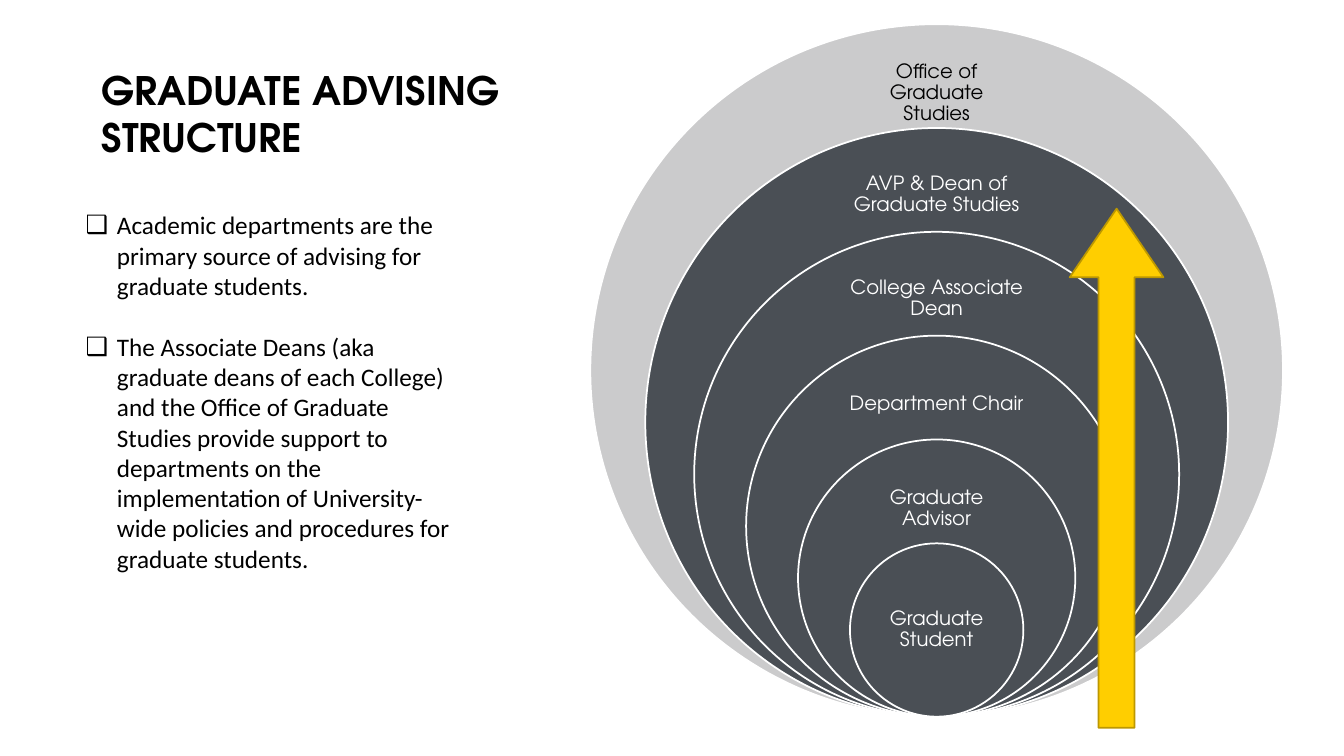
from lxml import etree
from pptx import Presentation
from pptx.dml.color import RGBColor
from pptx.enum.shapes import MSO_SHAPE
from pptx.enum.text import MSO_ANCHOR, MSO_AUTO_SIZE, PP_ALIGN
from pptx.oxml.ns import qn
from pptx.util import Inches, Pt

ELLIPSE = MSO_SHAPE.OVAL
ARROW = MSO_SHAPE.RIGHT_ARROW
TOP = MSO_ANCHOR.TOP
MIDDLE = MSO_ANCHOR.MIDDLE
NO_FIT = MSO_AUTO_SIZE.NONE
LEFT = PP_ALIGN.LEFT
CENTER = PP_ALIGN.CENTER

COLORS = {
    "black": "000000",
    "white": "FFFFFF",
    "gray": "8A8A8D",
    "slate": "4A4F55",
    "gold": "FFCE00",
    "dark gold": "BD9800",
}
HEADING_FONT = "TeX Gyre Adventor"
BODY_FONT = "Calibri"

TITLE = "GRADUATE ADVISING STRUCTURE"
POINTS = [
    "Academic departments are the primary source of advising for graduate students.",
    "The Associate Deans (aka graduate deans of each College) and the Office of "
    "Graduate Studies provide support to departments on the implementation of "
    "University-wide policies and procedures for graduate students.",
]

CIRCLE_CENTER = 9.29
CIRCLE_BOTTOM = 7.11
OUTER_DIAMETER = 6.87
DIAMETER_STEP = 1.03
LEVELS = [
    ("Office of Graduate Studies", 0.68, 1.82, 0.49),
    ("AVP & Dean of Graduate Studies", 1.6, 2.49, 0.67),
    ("College Associate Dean", 2.63, 2.49, 0.66),
    ("Department Chair", 3.67, 2.04, 0.68),
    ("Graduate Advisor", 4.7, 1.79, 0.69),
    ("Graduate Student", 5.82, 1.21, 0.86),
]


def rgb(name):
    return RGBColor.from_string(COLORS[name])


def write(para, text, size=18, font=BODY_FONT, color="black", bold=False,
          align=LEFT, spacing=1.0, before=0, after=0):
    para.alignment = align
    para.line_spacing = spacing
    para.space_before = Pt(before)
    para.space_after = Pt(after)
    span = para.add_run()
    span.text = text
    span.font.size = Pt(size)
    span.font.name = font
    span.font.bold = bold
    span.font.color.rgb = rgb(color)


class Page:
    def __init__(self, deck):
        self.slide = deck.slides.add_slide(deck.slide_layouts[1])
        self.shapes = self.slide.shapes
        self.line_width = Pt(1.25)

    def place(self, box, left, top, width, height, anchor=TOP):
        box.left, box.top = Inches(left), Inches(top)
        box.width, box.height = Inches(width), Inches(height)
        frame = box.text_frame
        frame.word_wrap = True
        frame.auto_size = NO_FIT
        frame.vertical_anchor = anchor
        return frame

    def title(self, text, *bounds):
        frame = self.place(self.shapes.title, *bounds)
        write(frame.paragraphs[0], text, size=28, font=HEADING_FONT, bold=True)

    def bullets(self, points, *bounds):
        frame = self.place(self.slide.placeholders[1], *bounds)
        for index, point in enumerate(points):
            para = frame.add_paragraph() if index else frame.paragraphs[0]
            write(para, point, before=22 if index else 0)
            properties = para._p.get_or_add_pPr()
            properties.set("marL", str(Inches(0.31)))
            properties.set("indent", str(-Inches(0.31)))
            etree.SubElement(properties, qn("a:buChar")).set("char", "❑")

    def shape(self, kind, left, top, width, height, fill, line, opacity=100):
        shape = self.shapes.add_shape(
            kind, Inches(left), Inches(top), Inches(width), Inches(height))
        shape.shadow.inherit = False
        shape.fill.solid()
        shape.fill.fore_color.rgb = rgb(fill)
        shape.line.color.rgb = rgb(line)
        shape.line.width = self.line_width
        if opacity < 100:
            color = shape._element.spPr.find(qn("a:solidFill"))[0]
            etree.SubElement(color, qn("a:alpha")).set("val", str(opacity * 1000))
        return shape

    def label(self, text, left, top, width, height, color):
        box = self.shapes.add_textbox(0, 0, 0, 0)
        frame = self.place(box, left, top, width, height, MIDDLE)
        frame.margin_left = frame.margin_right = Inches(0.11)
        frame.margin_top = frame.margin_bottom = Inches(0.11)
        write(frame.paragraphs[0], text, size=14, font=HEADING_FONT, color=color,
              align=CENTER, spacing=0.9, after=4.9)

    def level(self, index, text, top, width, height):
        outer = index == 0
        diameter = OUTER_DIAMETER - index * DIAMETER_STEP
        circle_width = 5.78 if index == 1 else diameter
        self.shape(ELLIPSE, CIRCLE_CENTER - circle_width / 2,
                   CIRCLE_BOTTOM - diameter, circle_width, diameter,
                   "gray" if outer else "slate", "white", 44 if outer else 100)
        self.label(text, CIRCLE_CENTER - width / 2, top, width, height,
                   "black" if outer else "white")

    def upward_arrow(self, *bounds):
        arrow = self.shape(ARROW, *bounds, "gold", "dark gold")
        arrow.rotation = 270
        arrow.adjustments[0] = 0.384
        arrow.adjustments[1] = 0.732


def main():
    deck = Presentation()
    deck.slide_width, deck.slide_height = Inches(13.33), Inches(7.5)
    page = Page(deck)
    page.title(TITLE, 0.91, 0.61, 4.52, 1.04)
    page.bullets(POINTS, 0.75, 2.03, 3.95, 3.74)
    for index, level in enumerate(LEVELS):
        page.level(index, *level)
    page.upward_arrow(8.5, 4.18, 5.15, 0.93)
    deck.save("out.pptx")


if __name__ == "__main__":
    main()
